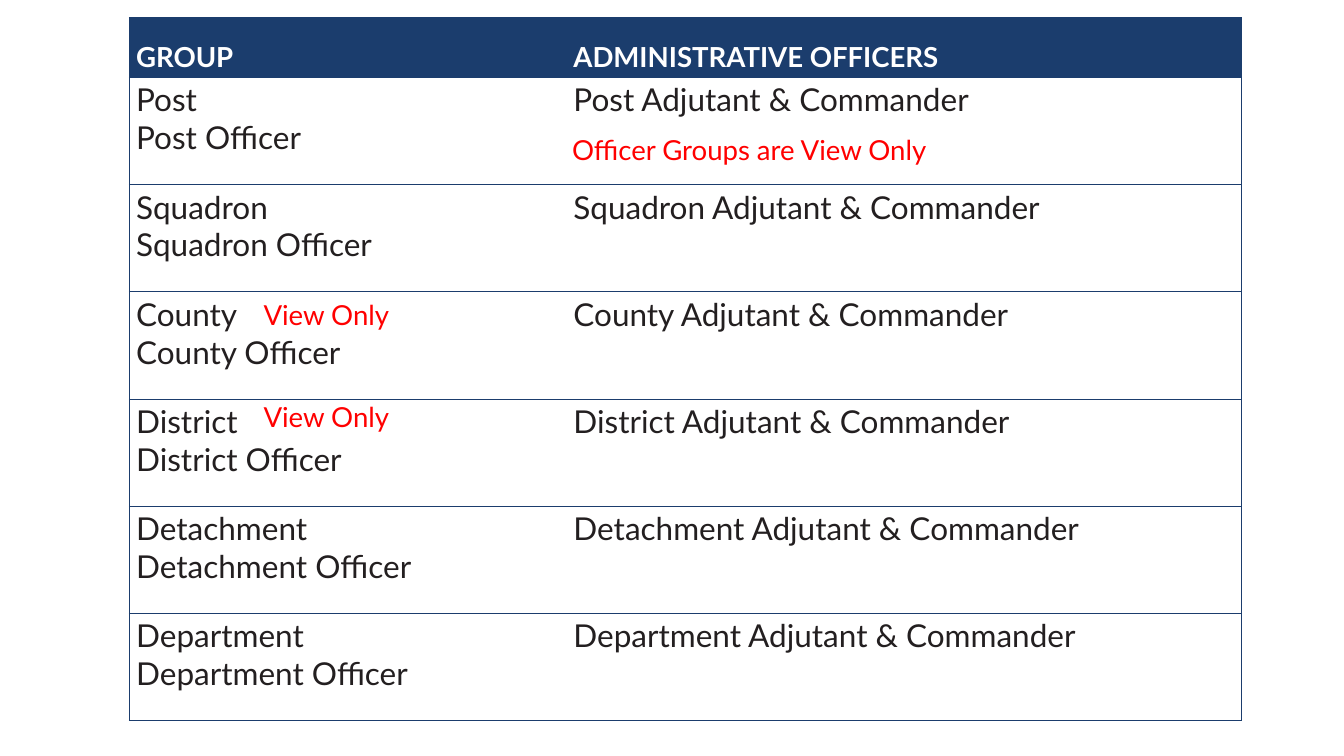
from lxml import etree
from pptx import Presentation
from pptx.dml.color import RGBColor
from pptx.enum.text import MSO_ANCHOR, PP_ALIGN
from pptx.oxml.ns import qn
from pptx.util import Inches, Pt

TOP, BOTTOM = MSO_ANCHOR.TOP, MSO_ANCHOR.BOTTOM
LEFT = PP_ALIGN.LEFT
NAVY, INK, RED, WHITE = "1B3D6D", "231F20", "FF0000", "FFFFFF"


def color(code):
    return RGBColor.from_string(code)


class Deck:
    """Holds the style and the current slide; lengths are percents of its size."""
    font = "Lato"

    def __init__(self, width, height):
        self.prs = Presentation()
        self.prs.slide_width, self.prs.slide_height = Inches(width), Inches(height)
        self.slide = self.prs.slides.add_slide(self.prs.slide_layouts[6])

    def across(self, share):
        return round(self.prs.slide_width * share / 100)

    def down(self, share):
        return round(self.prs.slide_height * share / 100)

    def text(self, frame, lines, size, ink, bold=False):
        for i, line in enumerate(lines):
            para = frame.paragraphs[0] if i == 0 else frame.add_paragraph()
            para.alignment = LEFT
            run = para.add_run()
            run.text = line
            run.font.name, run.font.size = self.font, Pt(size)
            run.font.bold, run.font.color.rgb = bold, color(ink)

    def note(self, x, y, width, words):
        box = self.slide.shapes.add_textbox(
            self.across(x), self.down(y), self.across(width), self.down(5.34))
        box.text_frame.word_wrap = True
        self.text(box.text_frame, [words], 28, RED)

    def edge(self, cell, sides):
        props = cell._tc.get_or_add_tcPr()
        for side in "LRTB":
            line = etree.SubElement(props, qn(f"a:ln{side}"), w=str(Pt(0.5)))
            if side in sides:
                fill = etree.SubElement(line, qn("a:solidFill"))
                etree.SubElement(fill, qn("a:srgbClr"), val=NAVY)
            else:
                etree.SubElement(line, qn("a:noFill"))

    def table(self, x, y, cols, head, row, data):
        heights = [head] + [row] * (len(data) - 1)
        table = self.slide.shapes.add_table(
            len(data), len(cols), self.across(x), self.down(y),
            self.across(sum(cols)), self.down(sum(heights))).table
        table.first_row = table.horz_banding = False
        for col, width in zip(table.columns, cols):
            col.width = self.across(width)
        for r, cells in enumerate(data):
            table.rows[r].height = self.down(heights[r])
            top = r == 0
            for c, lines in enumerate(cells):
                cell = table.cell(r, c)
                self.edge(cell, "TB" + ("L" if c == 0 else "R"))
                cell.fill.solid()
                cell.fill.fore_color.rgb = color(NAVY if top else WHITE)
                cell.vertical_anchor = BOTTOM if top else TOP
                self.text(cell.text_frame, lines, 28 if top else 32,
                          WHITE if top else INK, top)


def main():
    deck = Deck(18.96, 10.67)

    # Groups and their officers
    groups = ["Post", "Squadron", "County", "District", "Detachment", "Department"]
    data = [(["GROUP"], ["ADMINISTRATIVE OFFICERS"])]
    data += [([name, f"{name} Officer"], [f"{name} Adjutant & Commander"])
             for name in groups]
    deck.table(9.6, 2.34, [32.54, 50.21], 7.87, 14.18, data)

    # Red access notes
    deck.note(42.04, 17.06, 52.37, "Officer Groups are View Only")
    for y in (38.99, 52.48):
        deck.note(19.09, y, 12.18, "View Only")

    deck.prs.save("out.pptx")


if __name__ == "__main__":
    main()
